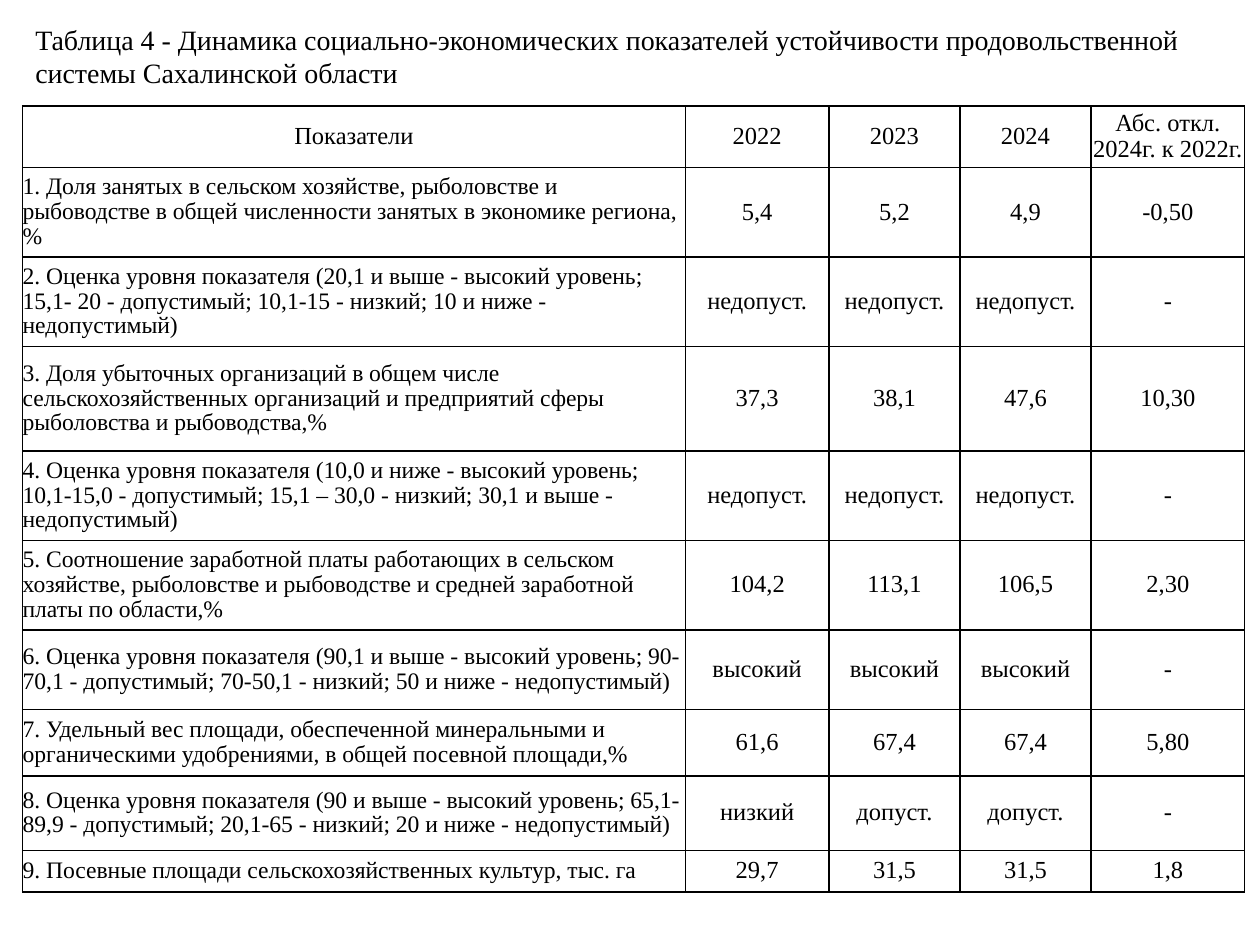
from dataclasses import dataclass

from lxml import etree
from pptx import Presentation, util as u
from pptx.dml.color import RGBColor
from pptx.enum import text
from pptx.oxml import ns


@dataclass(frozen=True)
class Theme:
    font: str = "Times New Roman"
    ink: str = "000000"
    title_size: float = 16
    value_size: float = 14
    label_size: float = 13.5
    border_width: float = 1
    line_spacing: float = 0.95


@dataclass(frozen=True)
class Area:
    left: float
    top: float
    width: float
    height: float

    def on(self, deck) -> tuple[int, int, int, int]:
        return (
            round(self.left * deck.slide_width),
            round(self.top * deck.slide_height),
            round(self.width * deck.slide_width),
            round(self.height * deck.slide_height),
        )


@dataclass(frozen=True)
class Indicator:
    label: str
    values: tuple[str, str, str]
    change: str
    height: int


THEME = Theme()
TITLE_AREA = Area(0.018, 0.017, 0.944, 0.085)
TABLE_AREA = Area(0.018, 0.112, 0.97, 0.832)
COLUMN_WEIGHTS = (526, 114, 104, 104, 122)

TITLE = (
    "Таблица 4 - Динамика социально-экономических показателей "
    "устойчивости продовольственной системы Сахалинской области"
)
HEADER = Indicator("Показатели", ("2022", "2023", "2024"), "Абс. откл. 2024г. к 2022г.", 49)
UNACCEPTABLE = ("недопуст.",) * 3
INDICATORS = (
    Indicator(
        "1. Доля занятых в сельском хозяйстве, рыболовстве и рыбоводстве "
        "в общей численности занятых в экономике региона,%",
        ("5,4", "5,2", "4,9"), "-0,50", 71),
    Indicator(
        "2. Оценка уровня показателя (20,1 и выше - высокий уровень; "
        "15,1- 20 - допустимый; 10,1-15 - низкий; 10 и ниже - недопустимый)",
        UNACCEPTABLE, "-", 71),
    Indicator(
        "3. Доля убыточных организаций в общем числе сельскохозяйственных "
        "организаций и предприятий сферы рыболовства и рыбоводства,%",
        ("37,3", "38,1", "47,6"), "10,30", 83),
    Indicator(
        "4. Оценка уровня показателя (10,0 и ниже - высокий уровень; "
        "10,1-15,0 - допустимый; 15,1 – 30,0 - низкий; 30,1 и выше - недопустимый)",
        UNACCEPTABLE, "-", 71),
    Indicator(
        "5. Соотношение заработной платы работающих в сельском хозяйстве, "
        "рыболовстве и рыбоводстве и средней заработной платы по области,%",
        ("104,2", "113,1", "106,5"), "2,30", 71),
    Indicator(
        "6. Оценка уровня показателя (90,1 и выше - высокий уровень; "
        "90-70,1 - допустимый; 70-50,1 - низкий; 50 и ниже - недопустимый)",
        ("высокий",) * 3, "-", 63),
    Indicator(
        "7. Удельный вес площади, обеспеченной минеральными и органическими "
        "удобрениями, в общей посевной площади,%",
        ("61,6", "67,4", "67,4"), "5,80", 53),
    Indicator(
        "8. Оценка уровня показателя (90 и выше - высокий уровень; "
        "65,1-89,9 - допустимый; 20,1-65 - низкий; 20 и ниже - недопустимый)",
        ("низкий", "допуст.", "допуст."), "-", 59),
    Indicator(
        "9. Посевные площади сельскохозяйственных культур, тыс. га",
        ("29,7", "31,5", "31,5"), "1,8", 33),
)


def style(paragraph, size: float, align) -> None:
    paragraph.alignment = align
    paragraph.font.name = THEME.font
    paragraph.font.size = u.Pt(size)
    paragraph.font.color.rgb = RGBColor.from_string(THEME.ink)


def add_borders(cell) -> None:
    properties = cell._tc.get_or_add_tcPr()
    for position, side in enumerate(("lnL", "lnR", "lnT", "lnB")):
        line = etree.Element(ns.qn(f"a:{side}"), w=str(u.Pt(THEME.border_width)))
        fill = etree.SubElement(line, ns.qn("a:solidFill"))
        etree.SubElement(fill, ns.qn("a:srgbClr"), val=THEME.ink)
        properties.insert(position, line)


def fill_cell(cell, content: str, size: float, align) -> None:
    cell.margin_left = cell.margin_right = cell.margin_top = cell.margin_bottom = 0
    cell.vertical_anchor = text.MSO_ANCHOR.MIDDLE
    cell.fill.background()
    cell.text = content
    paragraph = cell.text_frame.paragraphs[0]
    paragraph.line_spacing = THEME.line_spacing
    style(paragraph, size, align)
    add_borders(cell)


def share_out(lines, weights: tuple[int, ...], total: int, dimension: str) -> None:
    for line, weight in zip(lines, weights):
        setattr(line, dimension, round(total * weight / sum(weights)))


def draw_title(deck, slide) -> None:
    title = slide.shapes.title
    title.left, title.top, title.width, title.height = TITLE_AREA.on(deck)
    frame = title.text_frame
    frame.text = TITLE
    frame.word_wrap = True
    frame.auto_size = text.MSO_AUTO_SIZE.SHAPE_TO_FIT_TEXT
    frame.vertical_anchor = text.MSO_ANCHOR.TOP
    style(frame.paragraphs[0], THEME.title_size, text.PP_ALIGN.LEFT)


def draw_table(deck, slide) -> None:
    rows = (HEADER, *INDICATORS)
    area = TABLE_AREA.on(deck)
    table = slide.shapes.add_table(len(rows), len(COLUMN_WEIGHTS), *area).table
    table.horz_banding = False
    share_out(table.columns, COLUMN_WEIGHTS, area[2], "width")
    share_out(table.rows, tuple(row.height for row in rows), area[3], "height")
    for row_index, row in enumerate(rows):
        for column, content in enumerate((row.label, *row.values, row.change)):
            is_label = column == 0 and row is not HEADER
            fill_cell(
                table.cell(row_index, column),
                content,
                THEME.label_size if is_label else THEME.value_size,
                text.PP_ALIGN.LEFT if is_label else text.PP_ALIGN.CENTER,
            )
    table.first_row = False


def main() -> None:
    deck = Presentation()
    deck.slide_width, deck.slide_height = u.Inches(10), u.Inches(7.5)
    slide = deck.slides.add_slide(deck.slide_layouts.get_by_name("Title Only"))
    draw_title(deck, slide)
    draw_table(deck, slide)
    deck.save("out.pptx")


if __name__ == "__main__":
    main()
